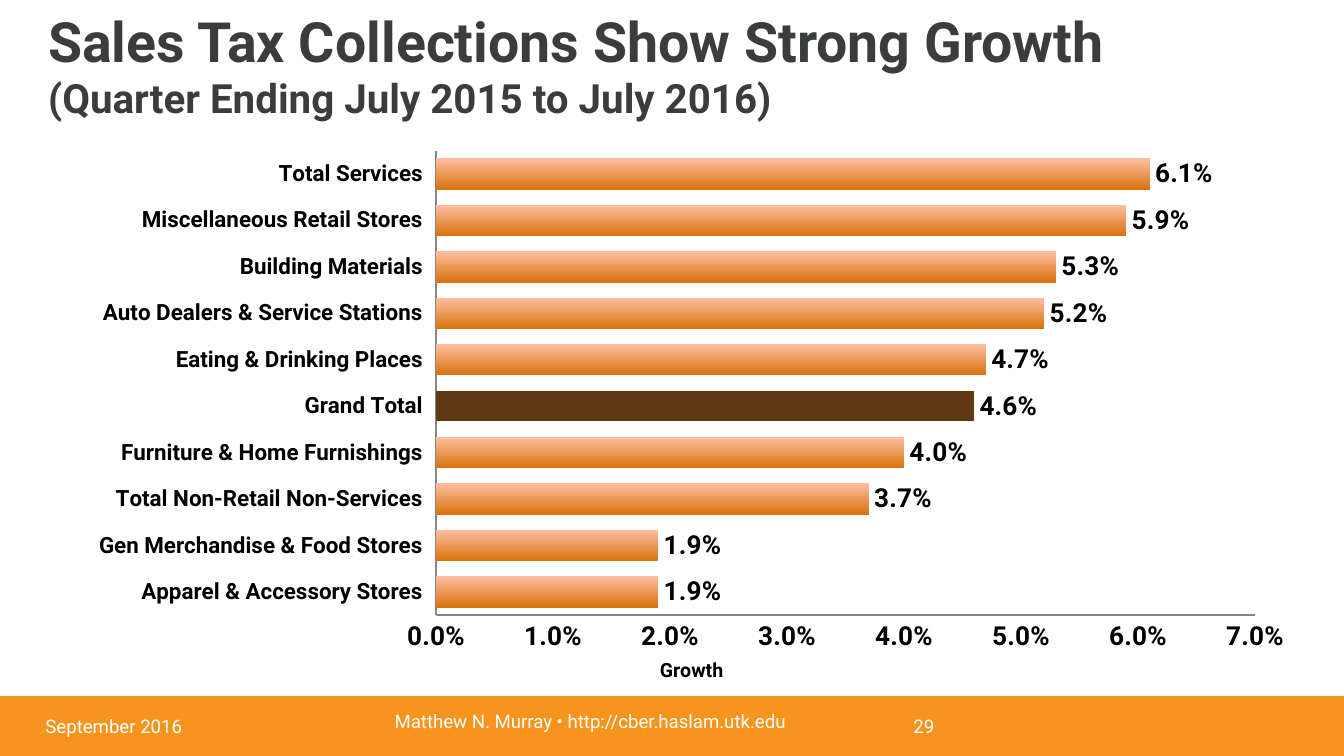
from pptx import Presentation, util as u
from pptx.chart.data import CategoryChartData
from pptx.dml.color import RGBColor
from pptx.enum import chart as kinds, shapes, text
from pptx.oxml import parse_xml
from pptx.oxml.ns import nsdecls

ROWS = [
    ("Apparel & Accessory Stores", 1.9),
    ("Gen Merchandise & Food Stores", 1.9),
    ("Total Non-Retail Non-Services", 3.7),
    ("Furniture & Home Furnishings", 4.0),
    ("Grand Total", 4.6),
    ("Eating & Drinking Places", 4.7),
    ("Auto Dealers & Service Stations", 5.2),
    ("Building Materials", 5.3),
    ("Miscellaneous Retail Stores", 5.9),
    ("Total Services", 6.1),
]
PLOT = {"x": 31.2, "y": 1.7, "w": 65.3, "h": 85.1}
FORMAT = "0.0%"


def tint(code):
    return RGBColor.from_string(code)


def style(font, size, color, bold=False):
    font.name, font.size, font.bold = "Roboto", u.Pt(size), bold
    font.color.rgb = tint(color)


def write(para, words, size=10, color="FFFFFF", bold=False):
    run = para.add_run()
    run.text = words
    style(run.font, size, color, bold)


class Deck:
    """Hold the style and the current slide, placing elements by percent of its size."""

    orange, brown, dark, grey = "F7941E", "603A14", "3B3C3E", "868686"
    shade = ("FDBFA2", "D9730F")

    def __init__(self, wide):
        self.prs = Presentation()
        self.prs.slide_width = u.Inches(wide)
        self.prs.slide_height = u.Inches(wide * 9 / 16)
        self.slide = self.prs.slides.add_slide(self.prs.slide_layouts[6])

    def area(self, *box):
        sides = (self.prs.slide_width, self.prs.slide_height) * 2
        return [round(share * side / 100) for share, side in zip(box, sides)]

    def band(self, *box):
        shape = self.slide.shapes.add_shape(shapes.MSO_SHAPE.RECTANGLE, *self.area(*box))
        shape.shadow.inherit = False
        shape.fill.solid()
        shape.fill.fore_color.rgb = tint(self.orange)
        shape.line.fill.background()

    def label(self, box, lines, align="LEFT"):
        frame = self.slide.shapes.add_textbox(*self.area(*box)).text_frame
        frame.word_wrap = True
        frame.vertical_anchor = text.MSO_ANCHOR.MIDDLE
        para = frame.paragraphs[0]
        para.alignment = text.PP_ALIGN[align]
        for i, (words, look) in enumerate(lines):
            if i:
                para.add_line_break()
            write(para, words, **look)

    def axis(self, axis, size):
        axis.has_major_gridlines = False
        axis.major_tick_mark = axis.minor_tick_mark = kinds.XL_TICK_MARK.NONE
        axis.format.line.color.rgb = tint(self.grey)
        axis.format.line.width = u.Pt(0.75)
        style(axis.tick_labels.font, size, "000000", True)

    def bars(self, box, rows, accent):
        data = CategoryChartData(number_format=FORMAT)
        data.categories = [name for name, _ in rows]
        data.add_series("Series 1", [round(value / 100, 3) for _, value in rows])
        chart = self.slide.shapes.add_chart(
            kinds.XL_CHART_TYPE.BAR_CLUSTERED, *self.area(*box), data).chart
        chart.has_legend = chart.has_title = False
        style(chart.font, 14, "000000", True)

        self.axis(chart.category_axis, 12)
        chart.category_axis.tick_label_position = kinds.XL_TICK_LABEL_POSITION.LOW
        scale = chart.value_axis
        self.axis(scale, 14)
        scale.minimum_scale, scale.maximum_scale, scale.major_unit = 0, 0.07, 0.01
        scale.tick_labels.number_format = FORMAT
        scale.tick_labels.number_format_is_linked = False
        write(scale.axis_title.text_frame.paragraphs[0], "Growth", 10.5, "000000", True)

        plot = chart.plots[0]
        plot.gap_width, plot.overlap, plot.vary_by_categories = 51, 10, False
        series = plot.series[0]
        fill = series.format.fill
        fill.gradient()
        fill.gradient_angle = 270
        for stop, code in zip(fill.gradient_stops, self.shade):
            stop.color.rgb = tint(code)
        point = series.points[accent].format.fill
        point.solid()
        point.fore_color.rgb = tint(self.brown)

        marks = series.data_labels
        marks.show_value = True
        marks.number_format, marks.number_format_is_linked = FORMAT, False
        marks.position = kinds.XL_LABEL_POSITION.OUTSIDE_END
        style(marks.font, 14, "000000", True)
        self.frame(chart)

    def frame(self, chart):
        area = chart.element.xpath("c:chart/c:plotArea")[0]
        for old in area.xpath("c:layout"):
            area.remove(old)
        modes = "".join(f'<c:{k}Mode val="edge"/>' for k in "xy")
        sizes = "".join(f'<c:{k} val="{v / 100:.3f}"/>' for k, v in PLOT.items())
        area.insert(0, parse_xml(
            f'<c:layout {nsdecls("c")}><c:manualLayout><c:layoutTarget val="inner"/>'
            f"{modes}{sizes}</c:manualLayout></c:layout>"))


def main():
    deck = Deck(10)
    deck.band(0, 92.08, 100, 7.92)
    deck.bars((3.33, 18.7, 93.33, 72.2), ROWS, accent=4)
    head = {"color": deck.dark, "bold": True}
    deck.label((2.6, 0.7, 94.8, 15.65), [
        ("Sales Tax Collections Show Strong Growth ", {"size": 29.7, **head}),
        ("(Quarter Ending July 2015 to July 2016)", {"size": 21.6, **head}),
    ])
    for left, top, width, words, align in (
        (2.4, 93.4, 15.3, "September 2016", "LEFT"),
        (66, 93.4, 4.5, "29", "RIGHT"),
        (15.5, 92.7, 56.8, "Matthew N. Murray • http://cber.haslam.utk.edu", "CENTER"),
    ):
        deck.label((left, top, width, 5.33), [(words, {})], align)
    deck.prs.save("out.pptx")


if __name__ == "__main__":
    main()
